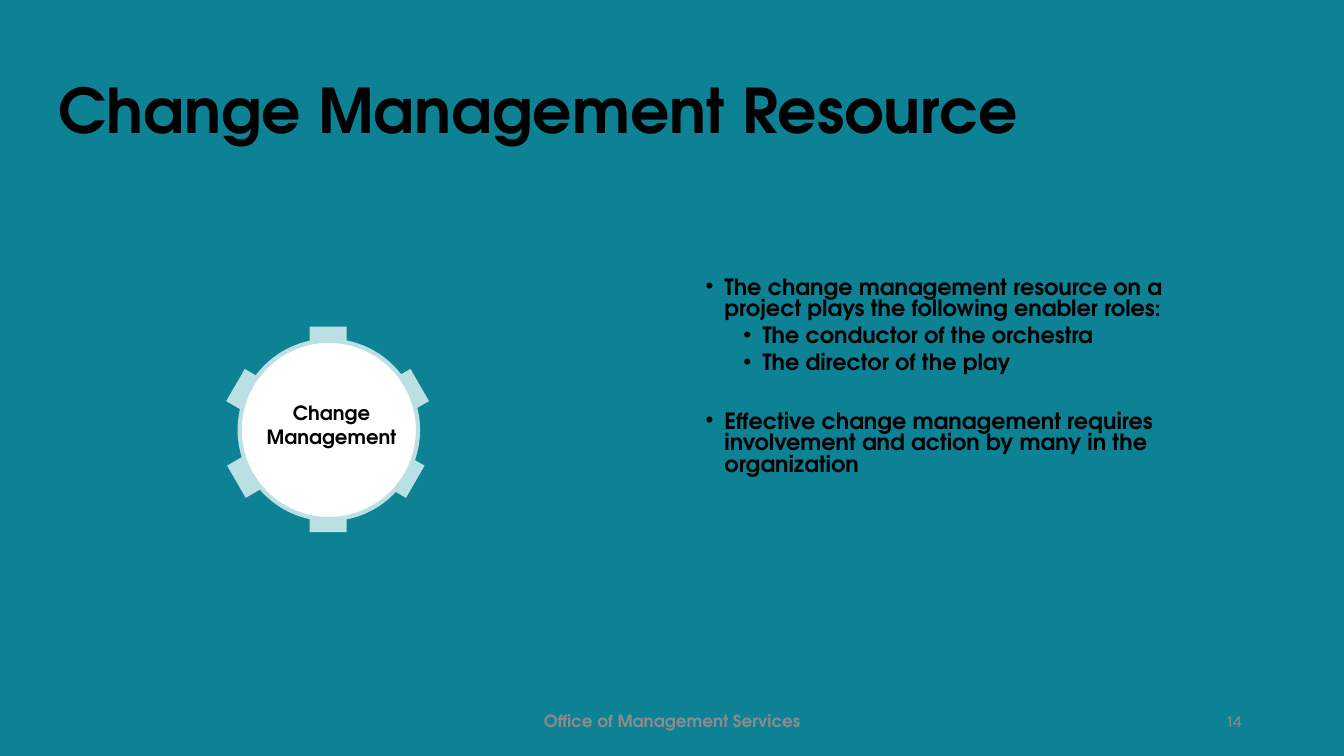
"""Build the Change Management Resource slide."""
from dataclasses import dataclass

from lxml.etree import SubElement
from pptx import Presentation
from pptx.dml.color import RGBColor
from pptx.enum.shapes import MSO_SHAPE
from pptx.enum.text import MSO_ANCHOR, MSO_AUTO_SIZE, PP_ALIGN
from pptx.oxml.ns import qn
from pptx.util import Pt

COLORS = {"bg": "0D8295", "text": "000000", "footer": "8C8C8C", "gear": "BBE0E3", "disc": "FFFFFF"}
HEAD_FONT = "TeX Gyre Adventor"
TOOTH_W, TOOTH_H = 26.6, 15.8


@dataclass
class Bullet:
    text: str
    level: int = 0
    before: float = 7.5


@dataclass
class Tooth:
    cx: float
    cy: float
    angle: float = 0


@dataclass
class Label:
    text: str
    box: tuple[float, float, float, float]
    align: PP_ALIGN
    size: float = 12
    font: str = HEAD_FONT
    color: str = "footer"
    bold: bool = True
    anchor: MSO_ANCHOR = MSO_ANCHOR.MIDDLE
    inset: bool = True


BULLETS = [
    Bullet("The change management resource on a project plays the following enabler roles:"),
    Bullet("The conductor of the orchestra", 1, 3.8),
    Bullet("The director of the play", 1, 3.8),
    Bullet("Effective change management requires involvement and action by many in the organization",
           before=26.6),
]
TEETH = [
    Tooth(234.4, 241.2), Tooth(234.4, 372.2),
    Tooth(293, 279, 60), Tooth(289.8, 340.2, 120),
    Tooth(175, 279, 120), Tooth(175.7, 340.2, 60),
]
LABELS = [
    Label("Office of Management Services", (318.2, 500.4, 324, 28.8), PP_ALIGN.CENTER),
    Label("14", (678.2, 500.4, 216, 28.8), PP_ALIGN.RIGHT, font="Karla", bold=False),
    Label("Change Management", (188.6, 286.4, 96.5, 34), PP_ALIGN.CENTER, 14,
          color="text", anchor=MSO_ANCHOR.TOP, inset=False),
]


def rgb(name: str) -> RGBColor:
    """Look up a named colour."""
    return RGBColor.from_string(COLORS[name])


def place(sp, x: float, y: float, w: float, h: float) -> None:
    """Set position and size in points."""
    sp.left, sp.top, sp.width, sp.height = Pt(x), Pt(y), Pt(w), Pt(h)


def write(p, text: str, *, size: float = 16, font: str = HEAD_FONT, color: str = "text",
          bold: bool = True, align: PP_ALIGN = PP_ALIGN.LEFT, spacing: float = 1.0,
          before: float = 0) -> None:
    """Write one formatted run into a paragraph."""
    p.alignment, p.line_spacing, p.space_before = align, spacing, Pt(before)
    r = p.add_run()
    r.text = text
    r.font.size, r.font.name, r.font.bold = Pt(size), font, bold
    r.font.color.rgb = rgb(color)


def add_bullets(tf, bullets: list[Bullet]) -> None:
    """Fill a text frame with a two-level bulleted list."""
    for i, b in enumerate(bullets):
        p = tf.add_paragraph() if i else tf.paragraphs[0]
        p.level = b.level
        write(p, b.text, spacing=0.8, before=b.before)
        pPr = p._p.get_or_add_pPr()
        pPr.set("marL", str(Pt(13.5 + 27 * b.level)))
        pPr.set("indent", str(Pt(-13.5)))
        SubElement(pPr, qn("a:buFont"), typeface="Arial")
        SubElement(pPr, qn("a:buChar"), char="•")


def add_filled(shapes, kind: MSO_SHAPE, box: tuple[float, float, float, float], color: str):
    """Add a filled shape without outline or shadow."""
    sp = shapes.add_shape(kind, *map(Pt, box))
    sp.shadow.inherit = False
    sp.fill.solid()
    sp.fill.fore_color.rgb = rgb(color)
    sp.line.fill.background()
    return sp


def add_gear(s) -> None:
    """Draw the gear as teeth around a ringed disc."""
    gear = s.shapes.add_group_shape().shapes
    for t in TEETH:
        box = (t.cx - TOOTH_W / 2, t.cy - TOOTH_H / 2, TOOTH_W, TOOTH_H)
        add_filled(gear, MSO_SHAPE.RECTANGLE, box, "gear").rotation = t.angle
    disc = add_filled(gear, MSO_SHAPE.OVAL, (171.2, 243.4, 127.4, 127.4), "disc")
    disc.line.color.rgb = rgb("gear")
    disc.line.width = Pt(3)


def add_label(s, label: Label) -> None:
    """Add one text box."""
    tf = s.shapes.add_textbox(*map(Pt, label.box)).text_frame
    tf.word_wrap = True
    tf.vertical_anchor = label.anchor
    if not label.inset:
        tf.margin_left = tf.margin_right = tf.margin_top = tf.margin_bottom = Pt(0)
    write(tf.paragraphs[0], label.text, size=label.size, font=label.font,
          color=label.color, bold=label.bold, align=label.align)


def main() -> None:
    """Assemble and save the slide."""
    prs = Presentation()
    prs.slide_width, prs.slide_height = Pt(960), Pt(540)
    s = prs.slides.add_slide(prs.slide_layouts[1])
    s.background.fill.solid()
    s.background.fill.fore_color.rgb = rgb("bg")

    title, body = s.shapes.title, s.placeholders[1]
    place(title, 34.6, 28.8, 859.7, 104.4)
    place(body, 496.8, 195.1, 396.7, 151.2)
    for sp in (title, body):
        sp.text_frame.word_wrap = True
        sp.text_frame.auto_size = MSO_AUTO_SIZE.NONE
    title.text_frame.vertical_anchor = MSO_ANCHOR.MIDDLE
    write(title.text_frame.paragraphs[0], "Change Management Resource", size=44, spacing=0.9)
    add_bullets(body.text_frame, BULLETS)

    add_gear(s)
    for label in LABELS:
        add_label(s, label)
    prs.save("out.pptx")


if __name__ == "__main__":
    main()
